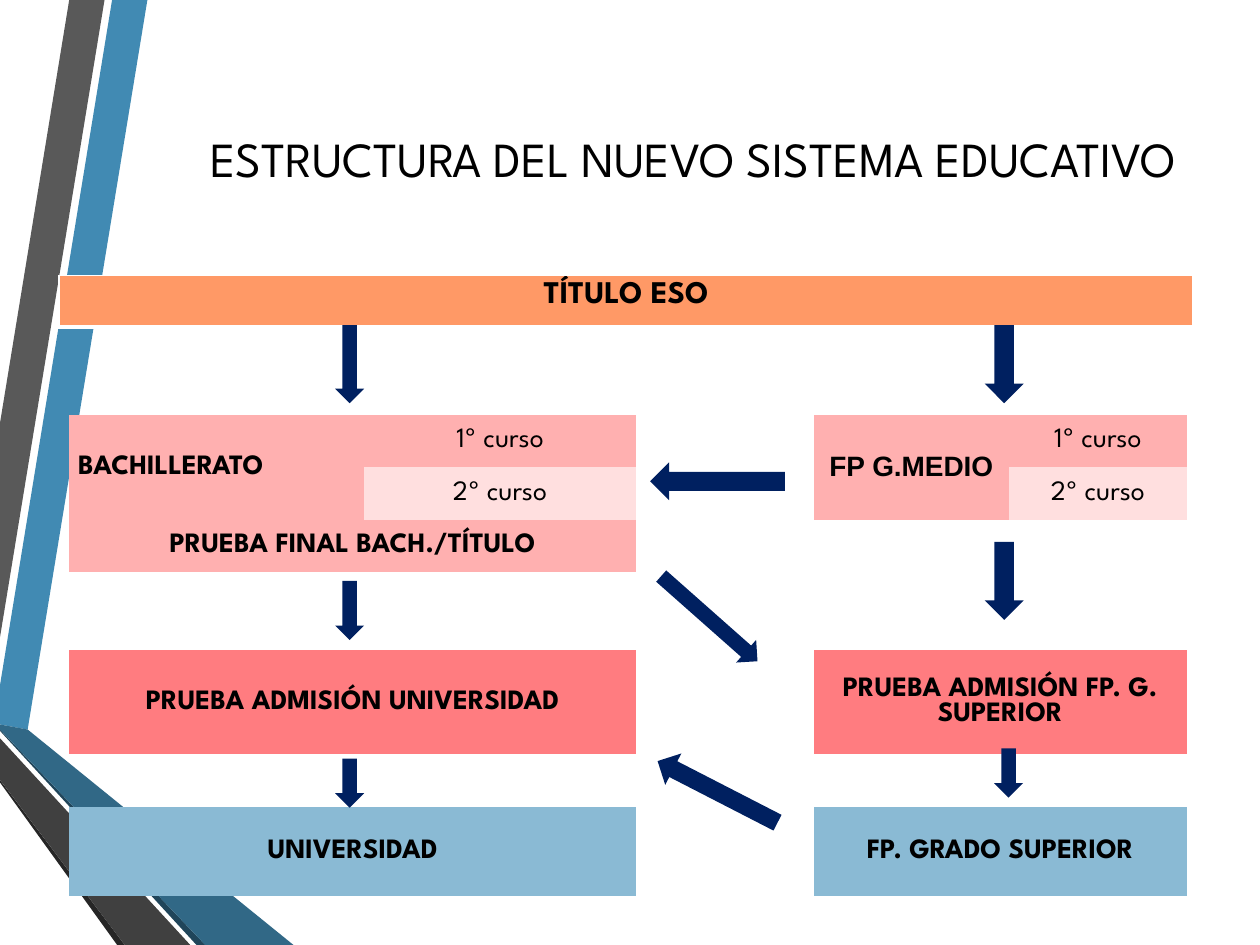
from dataclasses import dataclass

from lxml import etree
from pptx import Presentation
from pptx import util as u
from pptx.dml.color import RGBColor
from pptx.enum import shapes, text
from pptx.oxml import ns

COLS, ROWS = 100, 75  # slide grid; every module is a square
MODULE = u.Inches(0.1)
FONT = "League Spartan"
NO_STYLE = "{2D5ABB26-0587-4C30-8999-92F81FD0307C}"
COLORS = {
    "text": "000000", "white": "FFFFFF", "arrow": "002060",
    "blue": "418AB3", "blue_dark": "316886", "blue_edge": "20455A",
    "gray": "595959", "gray_dark": "404040", "gray_edge": "262626",
    "orange": "FF9966", "pink": "FFB0B0", "pink_light": "FFDFDF",
    "red": "FF7C80", "sky": "8ABAD4",
}


@dataclass(frozen=True)
class Band:
    color: str
    points: tuple


@dataclass(frozen=True)
class Stage:
    """A filled table cell, merged over rows and cols."""
    label: str
    color: str
    row: int
    col: int
    rows: int = 1
    cols: int = 1
    bold: bool = True
    font: str = FONT
    centered: bool = True


@dataclass(frozen=True)
class Gap:
    """An empty stretch of a table row, merged over cols."""
    row: int
    col: int
    cols: int


@dataclass(frozen=True)
class Arrow:
    x: float
    y: float
    w: float
    h: float
    rotation: float = 0
    kind: shapes.MSO_SHAPE = shapes.MSO_SHAPE.DOWN_ARROW


BANDS = [
    Band("blue", ((0, 54.4), (0, 57.5), (2.2, 57.9), (11.7, 0), (8.9, 0))),
    Band("gray", ((8.3, 0), (5.5, 0), (0, 33.6), (0, 50.6))),
    Band("gray_edge", ((0, 61.9), (0, 62.1), (9.3, ROWS), (9.9, ROWS))),
    Band("blue_edge", ((0, 57.9), (0, 58), (15.6, ROWS), (16.3, ROWS))),
    Band("blue_dark", ((0, 57.9), (16.3, ROWS), (23.3, ROWS), (2.2, 57.9), (0, 57.5))),
    Band("gray_dark", ((0, 61.9), (9.9, ROWS), (15.1, ROWS), (0, 58.6))),
]

STAGE_COLS = (21.6, 1.4, 21.6, 14.1, 15.5, 14.1)
STAGE_ROWS = (2.2, 4.17, 4.17, 4.17, 4.17, 6.2, 8.25, 4.2, 7.05)
STAGES = [
    Stage("BACHILLERATO", "pink", 2, 0, rows=2, cols=2, centered=False),
    Stage("1º curso", "pink", 2, 2, bold=False),
    Stage("2º curso", "pink_light", 3, 2, bold=False),
    Stage("PRUEBA FINAL BACH./TÍTULO", "pink", 4, 0, cols=3),
    Stage("PRUEBA ADMISIÓN UNIVERSIDAD", "red", 6, 0, cols=3),
    Stage("UNIVERSIDAD", "sky", 8, 0, cols=3),
    Stage("FP G.MEDIO", "pink", 2, 4, rows=2, font="Arial"),
    Stage("1º curso", "pink", 2, 5, bold=False),
    Stage("2º curso", "pink_light", 3, 5, bold=False),
    Stage("PRUEBA ADMISIÓN FP. G. SUPERIOR", "red", 6, 4, cols=2),
    Stage("FP. GRADO SUPERIOR", "sky", 8, 4, cols=2),
]
GAPS = [Gap(0, 0, 6), Gap(1, 1, 5), Gap(4, 4, 2),
        *(Gap(row, col, 2) for row in (5, 7) for col in (0, 4))]

LEFT, RIGHT = 26.6, 78.15  # left edges of the two columns of arrows
ARROWS = [
    Arrow(LEFT, 25.8, 2.3, 6.2),
    Arrow(RIGHT, 25.8, 3.1, 6.2),
    Arrow(51.6, 36.7, 10.7, 3, 180, shapes.MSO_SHAPE.RIGHT_ARROW),
    Arrow(RIGHT, 43, 3.1, 6.2),
    Arrow(78.9, 59.4, 2.3, 3.9),
    Arrow(LEFT, 46.1, 2.3, 4.7),
    Arrow(LEFT, 60.2, 2.3, 3.9),
    Arrow(55.1, 44, 2.4, 10.2, 311.5),
    Arrow(55.55, 57.5, 2.8, 10.7, 117.2),
]


def grid(*modules: float) -> list:
    return [u.Emu(round(m * MODULE)) for m in modules]


def rgb(name: str) -> RGBColor:
    return RGBColor.from_string(COLORS[name])


def write(tf, label: str, size: float, font: str = FONT, bold: bool = False,
          align=text.PP_ALIGN.CENTER) -> None:
    p = tf.paragraphs[0]
    p.alignment = align
    r = p.add_run()
    r.text = label
    r.font.name, r.font.size, r.font.bold = font, u.Pt(size), bold
    r.font.color.rgb = rgb("text")


def paint(sp, color: str) -> None:
    sp.shadow.inherit = False
    sp.fill.solid()
    sp.fill.fore_color.rgb = rgb(color)
    sp.line.fill.background()


def draw_band(slide, band: Band) -> None:
    start, *rest = [grid(*point) for point in band.points]
    builder = slide.shapes.build_freeform(*start)
    builder.add_line_segments(rest, close=True)
    paint(builder.convert_to_shape(), band.color)


def draw_arrow(slide, arrow: Arrow) -> None:
    sp = slide.shapes.add_shape(arrow.kind, *grid(arrow.x, arrow.y, arrow.w, arrow.h))
    sp.rotation = arrow.rotation
    paint(sp, "arrow")


def add_plain_table(slide, x: float, y: float, cols: tuple, rows: tuple):
    """Add a table without style, whose empty cells do not stretch its rows."""
    frame = slide.shapes.add_table(len(rows), len(cols), *grid(x, y, sum(cols), sum(rows)))
    table = frame.table
    table.first_row = table.horz_banding = False
    table._tbl.tblPr.find(ns.qn("a:tableStyleId")).text = NO_STYLE
    for column, width in zip(table.columns, grid(*cols)):
        column.width = width
    for row, height in zip(table.rows, grid(*rows)):
        row.height = height
    for cell in table.iter_cells():
        cell.fill.background()
        cell.margin_left = cell.margin_right = u.Inches(0.07)
        p = cell.text_frame.paragraphs[0]._p
        etree.SubElement(p, ns.qn("a:endParaRPr"), sz="600")
    return table


def fill_cell(cell, color: str) -> None:
    cell.fill.solid()
    cell.fill.fore_color.rgb = rgb(color)


def border_cell(cell, **widths: float) -> None:
    """Give white borders, in points, in the order L, R, T, B."""
    tc_pr = cell._tc.get_or_add_tcPr()
    for i, (side, width) in enumerate(widths.items()):
        ln = etree.Element(ns.qn(f"a:ln{side}"), w=str(u.Pt(width)))
        fill = etree.SubElement(ln, ns.qn("a:solidFill"))
        etree.SubElement(fill, ns.qn("a:srgbClr"), val=COLORS["white"])
        tc_pr.insert(i, ln)


def draw_stage(table, stage: Stage) -> None:
    cell = table.cell(stage.row, stage.col)
    if stage.rows * stage.cols > 1:
        cell.merge(table.cell(stage.row + stage.rows - 1, stage.col + stage.cols - 1))
    fill_cell(cell, stage.color)
    cell.vertical_anchor = text.MSO_ANCHOR.MIDDLE
    cell.margin_top = cell.margin_bottom = 0
    align = text.PP_ALIGN.CENTER if stage.centered else text.PP_ALIGN.LEFT
    write(cell.text_frame, stage.label, 16, stage.font, stage.bold, align)


def main() -> None:
    prs = Presentation()
    prs.slide_width, prs.slide_height = grid(COLS, ROWS)
    slide = prs.slides.add_slide(prs.slide_layouts[6])
    for band in BANDS:
        draw_band(slide, band)

    header = add_plain_table(slide, 4.7, 21.85, (90,), (4.1,)).cell(0, 0)
    fill_cell(header, "orange")
    border_cell(header, L=1, R=1, T=1, B=3)
    write(header.text_frame, "TÍTULO ESO", 18, bold=True)

    tf = slide.shapes.add_textbox(*grid(10, 6.25, 90, 12.5)).text_frame
    tf.word_wrap = True
    tf.vertical_anchor = text.MSO_ANCHOR.MIDDLE
    write(tf, "ESTRUCTURA DEL NUEVO SISTEMA EDUCATIVO", 28)

    table = add_plain_table(slide, 5.5, 26.55, STAGE_COLS, STAGE_ROWS)
    for gap in GAPS:
        table.cell(gap.row, gap.col).merge(table.cell(gap.row, gap.col + gap.cols - 1))
    for stage in STAGES:
        draw_stage(table, stage)
    for arrow in ARROWS:
        draw_arrow(slide, arrow)
    prs.save("out.pptx")


if __name__ == "__main__":
    main()
